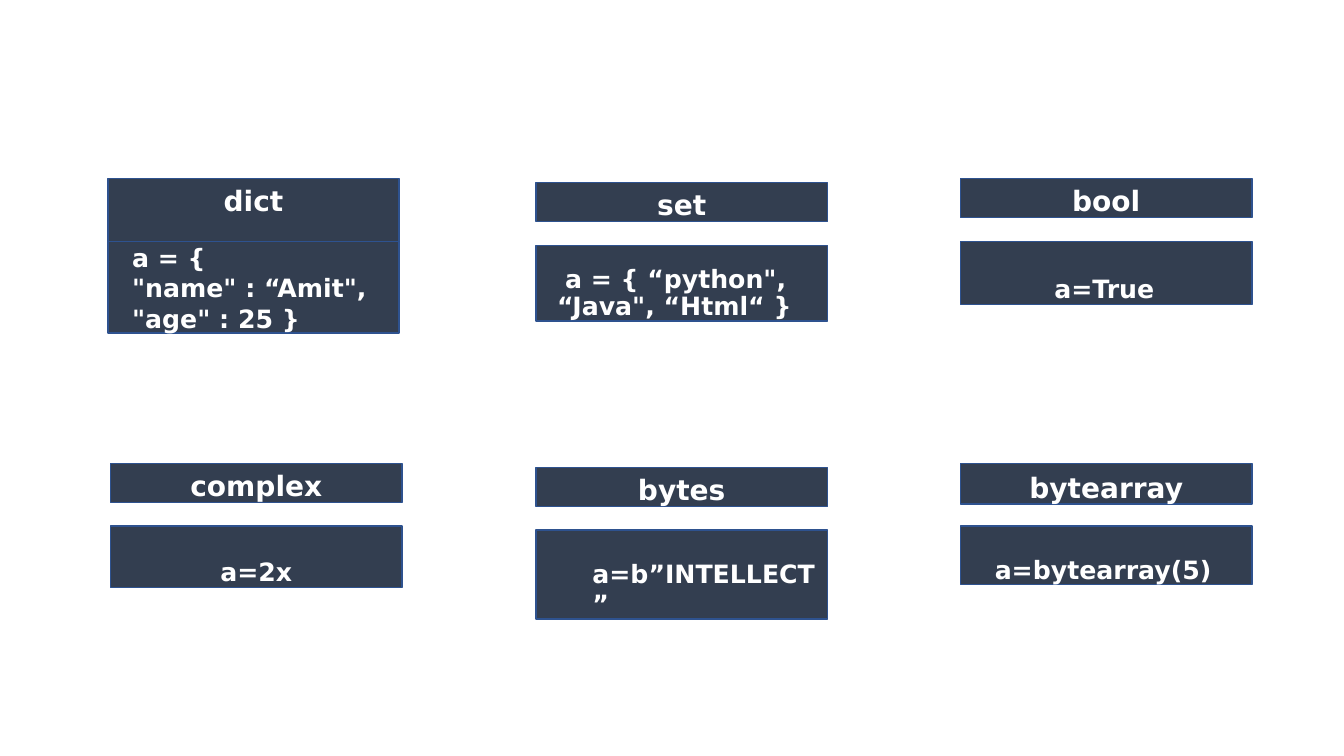
from pptx import Presentation
from pptx.dml.color import RGBColor
from pptx.enum.shapes import MSO_SHAPE
from pptx.enum.text import MSO_ANCHOR, MSO_AUTO_SIZE, PP_ALIGN
from pptx.util import Cm, Pt

FONT = "DejaVu Sans"
FILL, LINE, WHITE = "333E50", "2E528F", "FFFFFF"

# Type name, code lines, code box height, top inset,
# left indent (None = centred), first-line indent; all in cm
TYPES = [
    ("dict", ["a = {", '"name" : “Amit",', '"age" : 25 }'], 2.31, 0.03, 0.61, 0),
    ("set", ['a = { “python", “Java", “Html“ }'], 1.91, 0.53, 0.53, 0.2),
    ("bool", ["a=True"], 1.6, 0.81, 2.36, 0),
    ("complex", ["a=2x"], 1.55, 0.76, None, 0),
    ("bytes", ["a=b”INTELLECT”"], 2.24, 0.71, 1.42, 0),
    ("bytearray", ["a=bytearray(5)"], 1.47, 0.71, 0.86, 0),
]

# Grid in cm
COLUMNS = [2.79, 13.51, 24.21]
ROWS = [4.5, 11.68]
COLUMN_DROP = [0, 0.1, 0]
BOX_W, HEAD_H, CODE_DY = 7.34, 0.99, 1.58
# Boxes that depart from the grid
SHIFT_X = {"dict": -0.07}
HEAD_HEIGHTS = {"dict": 3.33, "bytearray": 1.02}
HEAD_INSETS = {"bytearray": 0.18}
LINE_SPACING = {"set": Pt(19.4)}


def rgb(value):
    return RGBColor.from_string(value)


def style_box(s, x, y, h, lines, size, inset, indent=None, first=0, spacing=None):
    s.left, s.top, s.width, s.height = Cm(x), Cm(y), Cm(BOX_W), Cm(h)
    s.fill.solid()
    s.fill.fore_color.rgb = rgb(FILL)
    s.line.color.rgb = rgb(LINE)
    s.line.width = Pt(1)
    tf = s.text_frame
    tf.text = "\n".join(lines)
    tf.word_wrap = True
    tf.auto_size = MSO_AUTO_SIZE.NONE
    tf.vertical_anchor = MSO_ANCHOR.TOP
    tf.margin_left = tf.margin_right = tf.margin_bottom = 0
    tf.margin_top = Cm(inset)
    for p in tf.paragraphs:
        p.alignment = PP_ALIGN.CENTER if indent is None else PP_ALIGN.LEFT
        if spacing:
            p.line_spacing = spacing
        if indent is not None:
            pPr = p._p.get_or_add_pPr()
            pPr.set("marL", str(Cm(indent)))
            pPr.set("indent", str(Cm(first)))
        for r in p.runs:
            r.font.name, r.font.size, r.font.bold = FONT, Pt(size), True
            r.font.color.rgb = rgb(WHITE)


def add_box(slide):
    s = slide.shapes.add_shape(MSO_SHAPE.RECTANGLE, 0, 0, 0, 0)
    s.shadow.inherit = False
    return s


prs = Presentation()
prs.slide_width, prs.slide_height = Cm(33.87), Cm(19.05)
slide = prs.slides.add_slide(prs.slide_layouts[5])

for i, (name, code, code_h, inset, indent, first) in enumerate(TYPES):
    row, col = divmod(i, len(COLUMNS))
    x = COLUMNS[col] + SHIFT_X.get(name, 0)
    y = ROWS[row] + COLUMN_DROP[col]
    # Heading: the first type is the slide title
    head = slide.shapes.title if i == 0 else add_box(slide)
    style_box(head, x, y, HEAD_HEIGHTS.get(name, HEAD_H), [name], 20,
              HEAD_INSETS.get(name, 0.13))
    # Code example
    style_box(add_box(slide), x, y + CODE_DY, code_h, code, 18, inset,
              indent, first, LINE_SPACING.get(name))

prs.save("out.pptx")
